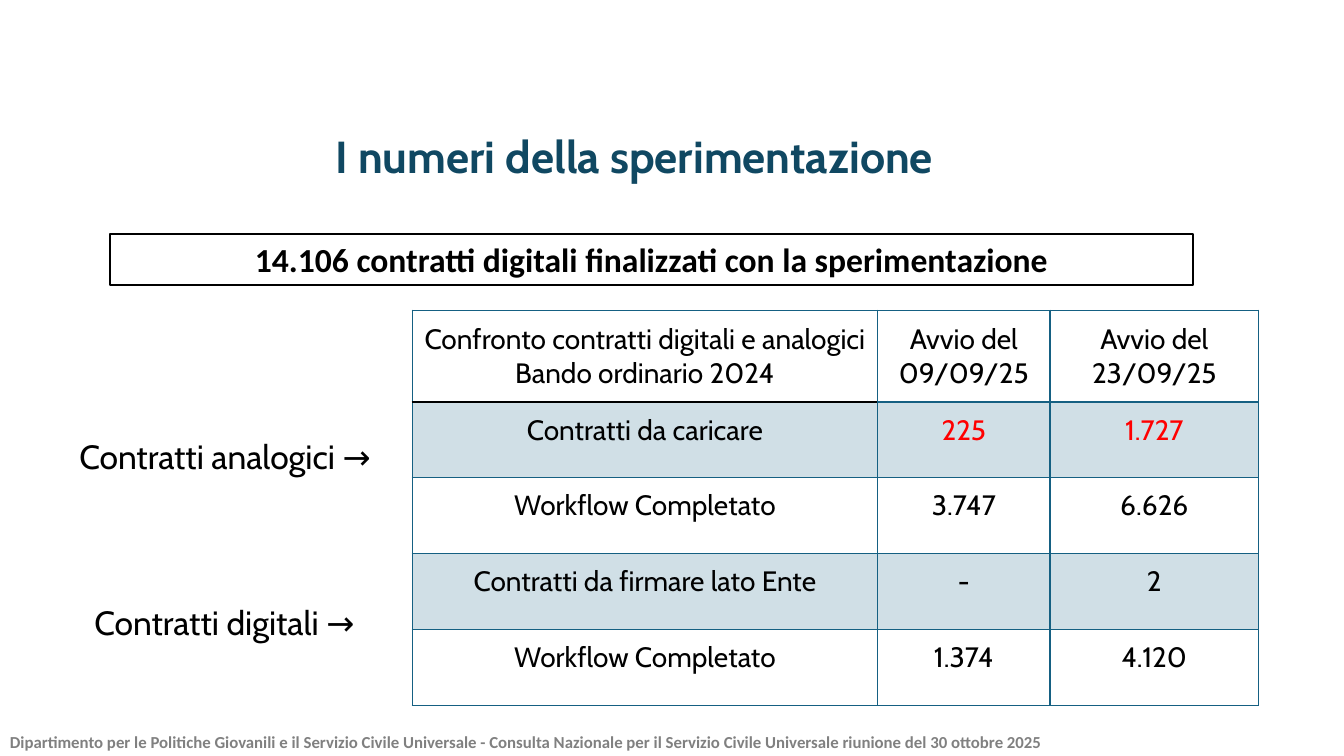
from lxml import etree
from pptx import Presentation
from pptx.dml.color import RGBColor
from pptx.enum import shapes, text
from pptx.oxml import ns
from pptx.util import Cm, Pt

COLORS = {"ink": "000000", "title": "104862", "rule": "156082",
          "alert": "FF0000", "footer": "808080", "paper": "FFFFFF"}
CENTER, LEFT = text.PP_ALIGN.CENTER, text.PP_ALIGN.LEFT

FOOTER = ("Dipartimento per le Politiche Giovanili e il Servizio Civile Universale - "
          "Consulta Nazionale per il Servizio Civile Universale riunione del 30 ottobre 2025")
BANNER = "14.106 contratti digitali finalizzati con la sperimentazione"
TITLE = "I numeri della sperimentazione"
LABELS = [("Contratti analogici →", 1.75, 10.85),
          ("Contratti digitali →", 2.13, 15.04)]
ROWS = [
    ("Confronto contratti digitali e analogici\nBando ordinario 2024",
     "Avvio del 09/09/25", "Avvio del 23/09/25"),
    ("Contratti da caricare", "225", "1.727"),
    ("Workflow Completato", "3.747", "6.626"),
    ("Contratti da firmare lato Ente", "-", "2"),
    ("Workflow Completato", "1.374", "4.120"),
]
COL_WIDTHS = (11.73, 4.34, 5.26)
HEADER_HEIGHT, ROW_HEIGHT = 2.31, 1.91
ALERT_ROW = 1

STYLES = {
    "footer": {"name": "Calibri", "size": Pt(12), "bold": True},
    "banner": {"name": "Calibri", "size": Pt(24), "bold": True},
    "title": {"name": "Cabin", "size": Pt(32), "bold": True},
    "label": {"name": "Cabin", "size": Pt(24), "bold": False},
    "cell": {"name": "Cabin", "size": Pt(20), "bold": False},
}


def rgb(color):
    return RGBColor.from_string(COLORS[color])


def write(tf, content, style, color="ink", align=LEFT, spacing=None):
    for i, line in enumerate(content.split("\n")):
        p = tf.paragraphs[0] if i == 0 else tf.add_paragraph()
        p.alignment = align
        if spacing:
            p.line_spacing = spacing
        r = p.add_run()
        r.text = line
        for key, value in STYLES[style].items():
            setattr(r.font, key, value)
        r.font.color.rgb = rgb(color)


def add_text(s, box, content, style, wrap=True, **look):
    tf = s.shapes.add_textbox(*map(Cm, box)).text_frame
    tf.word_wrap = wrap
    write(tf, content, style, **look)


def set_borders(cell, edges):
    tcPr = cell._tc.get_or_add_tcPr()
    for i, (side, (color, width)) in enumerate(edges.items()):
        ln = etree.Element(ns.qn(f"a:ln{side}"), w=str(Pt(width)))
        fill = etree.SubElement(ln, ns.qn("a:solidFill"))
        etree.SubElement(fill, ns.qn("a:srgbClr"), val=COLORS[color])
        tcPr.insert(i, ln)


def fill_cell(cell, banded):
    if not banded:
        cell.fill.background()
        return
    cell.fill.solid()
    cell.fill.fore_color.rgb = rgb("rule")
    clr = cell._tc.tcPr.find(".//" + ns.qn("a:srgbClr"))
    etree.SubElement(clr, ns.qn("a:alpha"), val="20000")


def header_rule(col):
    return ("ink", 1) if col == 0 else ("rule", 2)


def add_table(s):
    height = HEADER_HEIGHT + ROW_HEIGHT * (len(ROWS) - 1)
    box = map(Cm, (10.39, 7.82, sum(COL_WIDTHS), height))
    table = s.shapes.add_table(len(ROWS), len(COL_WIDTHS), *box).table
    table.first_row = table.horz_banding = False
    for column, width in zip(table.columns, COL_WIDTHS):
        column.width = Cm(width)
    for i, row in enumerate(ROWS):
        table.rows[i].height = Cm(ROW_HEIGHT if i else HEADER_HEIGHT)
        for j, content in enumerate(row):
            cell = table.cell(i, j)
            cell.vertical_anchor = text.MSO_ANCHOR.MIDDLE
            for side in ("left", "right", "top", "bottom"):
                setattr(cell, f"margin_{side}", 0)
            color = "alert" if i == ALERT_ROW and j else "ink"
            write(cell.text_frame, content, "cell", color, CENTER,
                  Pt(10.5) if i else None)
            fill_cell(cell, i % 2 == 1)
            edges = dict.fromkeys("LRTB", ("rule", 1))
            if i < 2:
                edges["T" if i else "B"] = header_rule(j)
            set_borders(cell, edges)


def main():
    prs = Presentation()
    prs.slide_width, prs.slide_height = Cm(33.87), Cm(19.05)
    s = prs.slides.add_slide(prs.slide_layouts[6])

    add_text(s, (0, 18.31, 28.58, 0.74), FOOTER, "footer", color="footer")

    sp = s.shapes.add_shape(shapes.MSO_SHAPE.RECTANGLE,
                            *map(Cm, (2.77, 5.9, 27.3, 1.28)))
    sp.shadow.inherit = False
    sp.fill.solid()
    sp.fill.fore_color.rgb = rgb("paper")
    sp.line.color.rgb = rgb("ink")
    sp.line.width = Pt(1.5)
    write(sp.text_frame, BANNER, "banner", align=CENTER)

    add_text(s, (7.7, 3.12, 16.59, 1.63), TITLE, "title", wrap=False,
             color="title", align=CENTER)
    add_table(s)
    for label, left, top in LABELS:
        add_text(s, (left, top, 8.31, 1.27), label, "label")

    prs.save("out.pptx")


if __name__ == "__main__":
    main()
